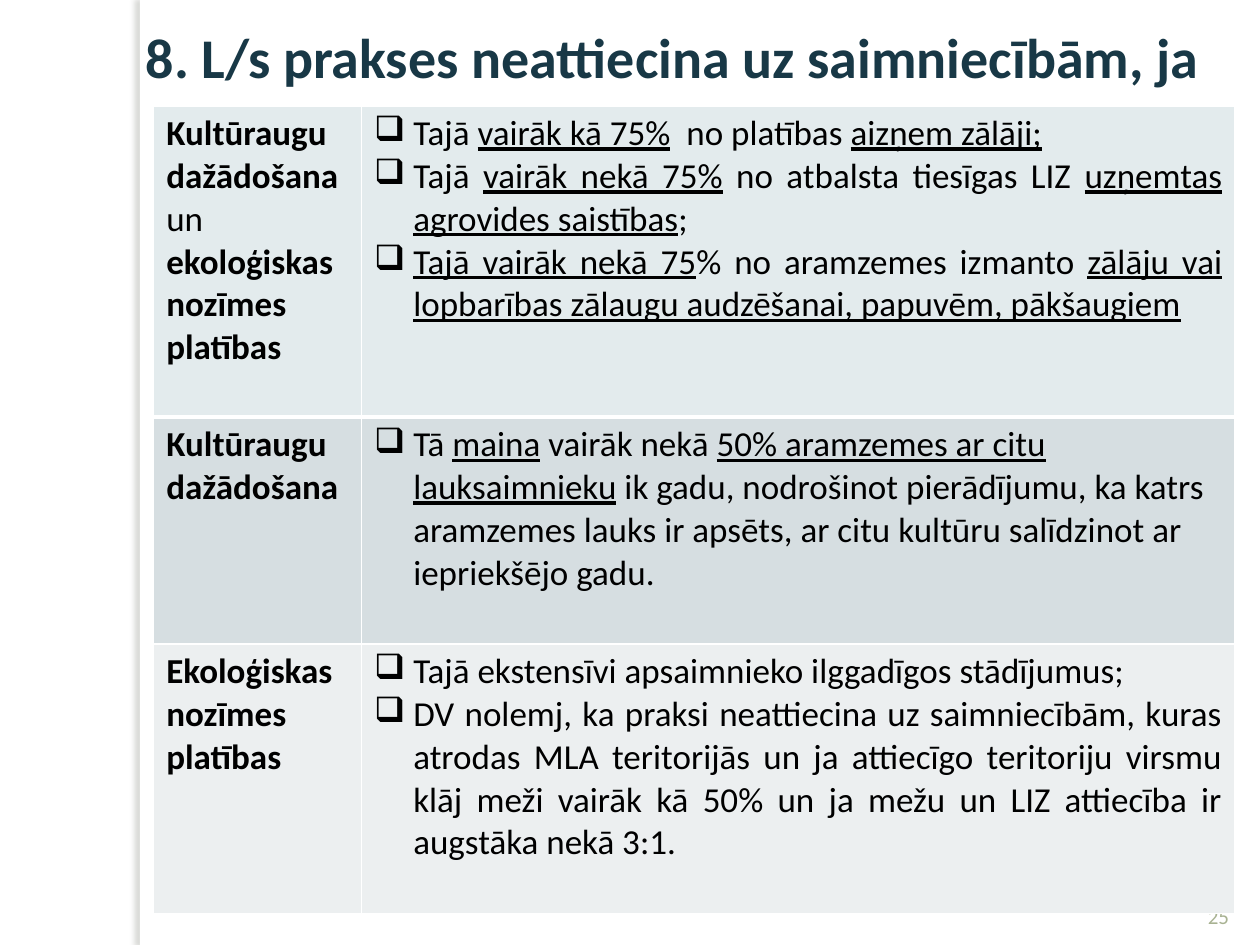
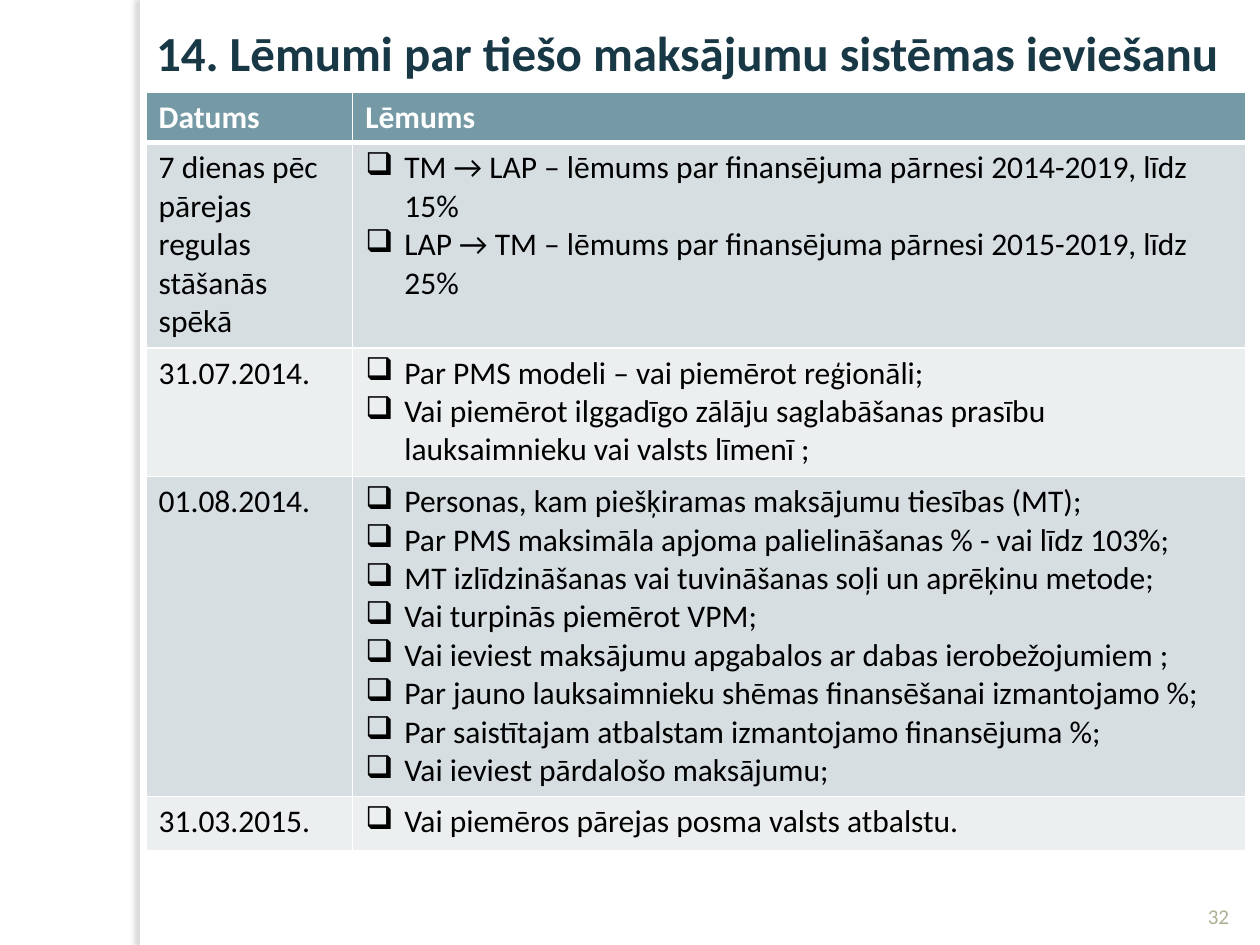
from dataclasses import dataclass

from lxml.etree import SubElement
from pptx import Presentation
from pptx.dml.color import RGBColor
from pptx.enum.shapes import MSO_SHAPE as Shape
from pptx.enum.text import MSO_ANCHOR as Anchor, PP_ALIGN as Align
from pptx.oxml import parse_xml
from pptx.oxml.ns import nsdecls, qn
from pptx.util import Emu, Inches, Pt


@dataclass(frozen=True)
class Theme:
    font: str = "Calibri"
    ink: str = "000000"
    title: str = "183846"
    number: str = "A8B292"
    white: str = "FFFFFF"
    shadow: str = "6F7367"
    header: str = "759AA5"
    lead: str = "E3EBED"
    dark: str = "D6DEE1"
    light: str = "ECEFF0"
    number_size: int = 12
    thin: int = 1
    thick: int = 3
    indent: float = 0.31
    bullet: str = "❑"


THEME = Theme()
WIDTH, HEIGHT = 10, 7.5

# Text between | marks is emphasised: bold in the first column, underlined in the second.
SLIDES = [
    dict(
        number="25", title="8. L/s prakses neattiecina uz saimniecībām, ja",
        title_left=1.06, title_size=32, body_size=20,
        origin=(1.22, 0.84), columns=(1.65, 6.93), header=None,
        rows=[
            dict(height=2.47, fill=THEME.lead, align=Align.JUSTIFY,
                 label=["|Kultūraugu dažādošana|", "un", "|ekoloģiskas nozīmes platības|"],
                 points=[
                     "Tajā |vairāk kā 75%|  no platības |aizņem zālāji;|",
                     "Tajā |vairāk nekā 75%| no atbalsta tiesīgas LIZ "
                     "|uzņemtas agrovides saistības|;",
                     "|Tajā vairāk nekā 75|% no aramzemes izmanto |zālāju vai "
                     "lopbarības zālaugu audzēšanai, papuvēm, pākšaugiem|"]),
            dict(height=1.8, fill=THEME.dark,
                 label=["|Kultūraugu dažādošana|"],
                 points=[
                     "Tā |maina| vairāk nekā |50% aramzemes ar citu lauksaimnieku| ik gadu, "
                     "nodrošinot pierādījumu, ka katrs aramzemes lauks ir apsēts, "
                     "ar citu kultūru salīdzinot ar iepriekšējo gadu."]),
            dict(height=2.14, fill=THEME.light, align=Align.JUSTIFY,
                 label=["|Ekoloģiskas nozīmes platības|"],
                 points=[
                     "Tajā ekstensīvi apsaimnieko ilggadīgos stādījumus;",
                     "DV nolemj, ka praksi neattiecina uz saimniecībām, kuras atrodas MLA "
                     "teritorijās un ja attiecīgo teritoriju virsmu klāj meži vairāk kā 50% "
                     "un ja mežu un LIZ attiecība ir augstāka nekā 3:1."]),
        ]),
    dict(
        number="32", title="14. Lēmumi par tiešo maksājumu sistēmas ieviešanu",
        title_left=1.14, title_size=28, body_size=18,
        origin=(1.16, 0.73), columns=(1.64, 7.09), header=("Datums", "Lēmums"),
        rows=[
            dict(height=1.63, fill=THEME.dark,
                 label=["7 dienas pēc pārejas regulas stāšanās spēkā"],
                 points=["TM → LAP – lēmums par finansējuma pārnesi 2014-2019, līdz 15%",
                         "LAP → TM – lēmums par finansējuma pārnesi 2015-2019, līdz 25%"]),
            dict(height=1.02, fill=THEME.light, label=["31.07.2014."],
                 points=["Par PMS modeli – vai piemērot reģionāli;",
                         "Vai piemērot ilggadīgo zālāju saglabāšanas prasību "
                         "lauksaimnieku vai valsts līmenī ;"]),
            dict(height=2.54, fill=THEME.dark, label=["01.08.2014."],
                 points=["Personas, kam piešķiramas maksājumu tiesības (MT);",
                         "Par PMS maksimāla apjoma palielināšanas % - vai līdz 103%;",
                         "MT izlīdzināšanas vai tuvināšanas soļi un aprēķinu metode;",
                         "Vai turpinās piemērot VPM;",
                         "Vai ieviest maksājumu apgabalos ar dabas ierobežojumiem ;",
                         "Par jauno lauksaimnieku shēmas finansēšanai izmantojamo %;",
                         "Par saistītajam atbalstam izmantojamo finansējuma %;",
                         "Vai ieviest pārdalošo maksājumu;"]),
            dict(height=0.43, fill=THEME.light, label=["31.03.2015."],
                 points=["Vai piemēros pārejas posma valsts atbalstu."]),
        ]),
]
HEADER_HEIGHT = 0.4


def write(frame, lines, size, color=THEME.ink, bold=False, align=Align.LEFT,
          emphasis="bold", bulleted=False):
    """Fill a text frame, one paragraph a line; |marked| parts get the emphasis."""
    frame.word_wrap = True
    for index, line in enumerate(lines):
        paragraph = frame.paragraphs[0] if index == 0 else frame.add_paragraph()
        paragraph.alignment = align
        if bulleted:
            add_bullet(paragraph)
        for part, words in enumerate(line.split("|")):
            if not words:
                continue
            run = paragraph.add_run()
            run.text = words
            run.font.name, run.font.size, run.font.bold = THEME.font, Pt(size), bold
            run.font.color.rgb = RGBColor.from_string(color)
            if part % 2:
                setattr(run.font, emphasis, True)


def add_bullet(paragraph):
    props = paragraph._p.get_or_add_pPr()
    indent = Inches(THEME.indent)
    props.set("marL", str(indent))
    props.set("indent", str(-indent))
    SubElement(props, qn("a:buChar")).set("char", THEME.bullet)


def add_text(slide, box, line, anchor=Anchor.TOP, **style):
    frame = slide.shapes.add_textbox(*map(Inches, box)).text_frame
    frame.vertical_anchor = anchor
    write(frame, [line], **style)


def add_side_band(slide):
    band = slide.shapes.add_shape(Shape.RECTANGLE, Inches(1.11), 0, Inches(0.08), Inches(HEIGHT))
    band.fill.solid()
    band.fill.fore_color.rgb = RGBColor.from_string(THEME.white)
    band.line.fill.background()
    band._element.spPr.append(parse_xml(
        f'<a:effectLst {nsdecls("a")}><a:outerShdw blurRad="{Pt(3)}" dist="{Pt(3)}" '
        f'dir="10800000" algn="ctr" rotWithShape="0"><a:srgbClr val="{THEME.shadow}">'
        '<a:alpha val="25000"/></a:srgbClr></a:outerShdw></a:effectLst>'))


def style_cell(cell, fill, top, bottom):
    props = cell._tc.get_or_add_tcPr()
    for side, width in zip("LRTB", (THEME.thin, THEME.thin, top, bottom)):
        props.append(parse_xml(
            f'<a:ln{side} {nsdecls("a")} w="{Pt(width)}"><a:solidFill>'
            f'<a:srgbClr val="{THEME.white}"/></a:solidFill></a:ln{side}>'))
    cell.fill.solid()
    cell.fill.fore_color.rgb = RGBColor.from_string(fill)


def add_rules_table(slide, content):
    header, rows, size = content["header"], content["rows"], content["body_size"]
    heights = [HEADER_HEIGHT] * bool(header) + [row["height"] for row in rows]
    fills = [THEME.header] * bool(header) + [row["fill"] for row in rows]
    columns = content["columns"]
    table = slide.shapes.add_table(
        len(heights), len(columns), *map(Inches, content["origin"]),
        Inches(sum(columns)), Inches(sum(heights))).table
    for column, width in zip(table.columns, columns):
        column.width = Inches(width)

    for index, (height, fill) in enumerate(zip(heights, fills)):
        table.rows[index].height = Inches(height)
        for cell in table.rows[index].cells:
            style_cell(cell, fill,
                       top=THEME.thick if index == 1 else THEME.thin,
                       bottom=THEME.thick if index == 0 else THEME.thin)

    if header:
        for cell, heading in zip(table.rows[0].cells, header):
            write(cell.text_frame, [heading], size, color=THEME.white, bold=True)
    for index, row in enumerate(rows, start=int(bool(header))):
        write(table.cell(index, 0).text_frame, row["label"], size)
        write(table.cell(index, 1).text_frame, row["points"], size, emphasis="underline",
              align=row.get("align", Align.LEFT), bulleted=True)


def build_slide(deck, content):
    slide = deck.slides.add_slide(deck.slide_layouts[6])
    add_side_band(slide)
    add_text(slide, (9.42, 6.9, 0.5, 0.52), content["number"], anchor=Anchor.BOTTOM,
             size=THEME.number_size, color=THEME.number, align=Align.CENTER)
    add_text(slide, (content["title_left"], 0.13, 8.74, 0.64), content["title"],
             size=content["title_size"], color=THEME.title, bold=True)
    add_rules_table(slide, content)


def main():
    deck = Presentation()
    deck.slide_width, deck.slide_height = Emu(Inches(WIDTH)), Emu(Inches(HEIGHT))
    for content in SLIDES:
        build_slide(deck, content)
    deck.save("out.pptx")


if __name__ == "__main__":
    main()
